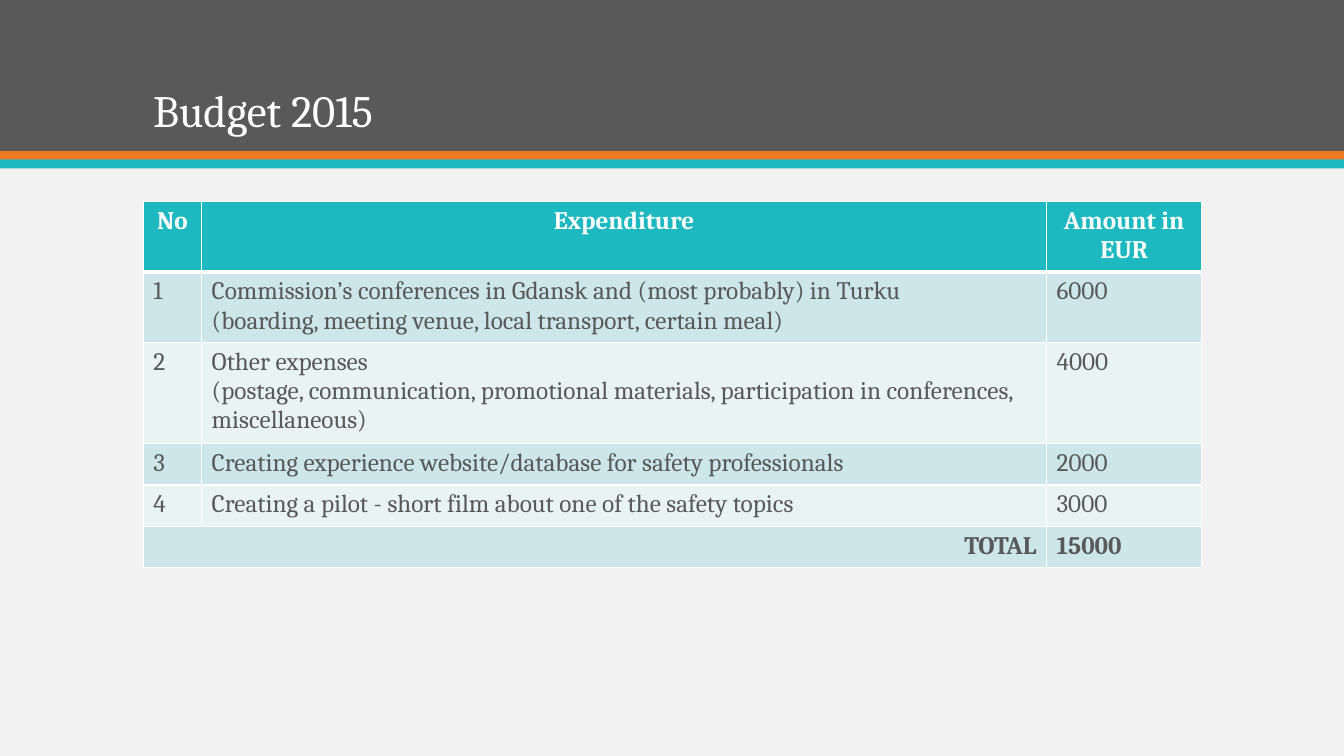
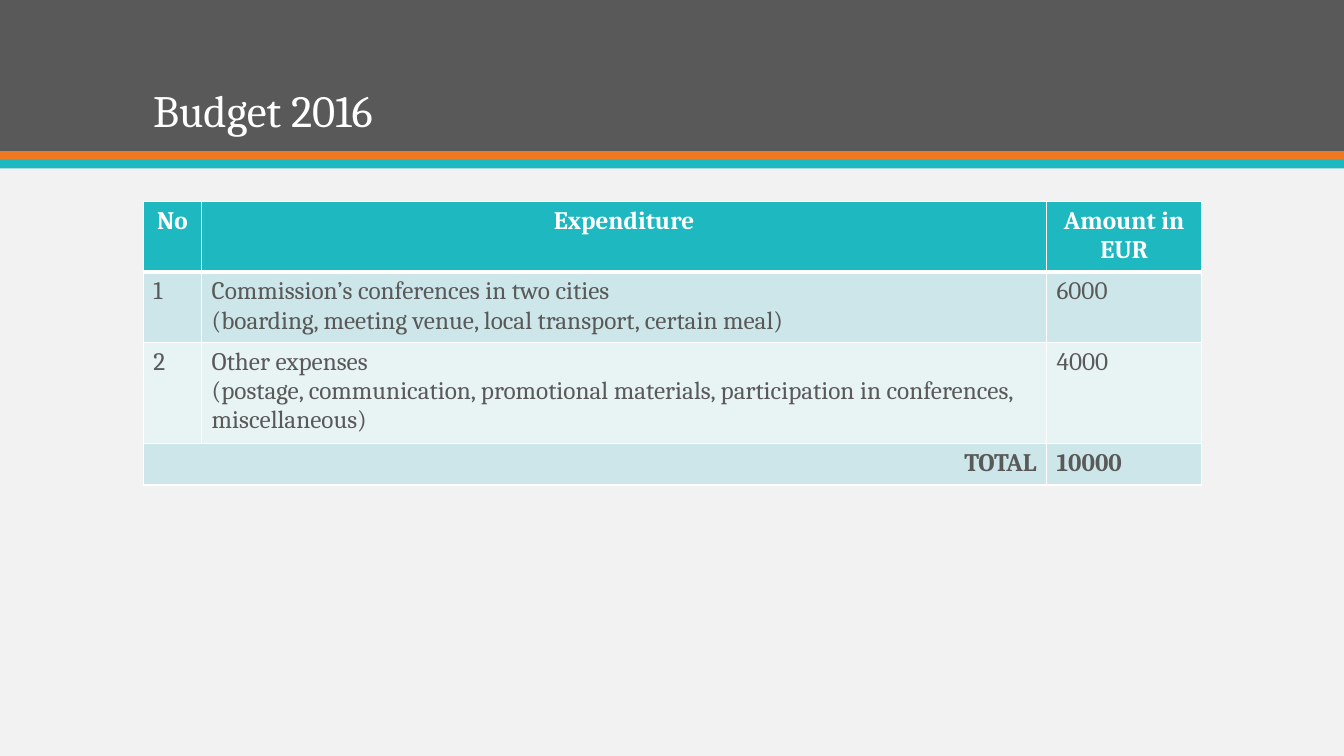
"""Build two yearly budget slides with a shared title band and table style."""
from lxml.etree import SubElement as Sub
from pptx import Presentation
from pptx.dml.color import RGBColor
from pptx.enum.shapes import MSO_SHAPE as Shape
from pptx.enum.text import MSO_ANCHOR as Anchor, PP_ALIGN as Align
from pptx.oxml.ns import qn
from pptx.util import Inches, Pt

WHITE = RGBColor(0xFF, 0xFF, 0xFF)
PALE = RGBColor(0xF2, 0xF2, 0xF2)
GRAY = RGBColor(0x59, 0x59, 0x59)
ORANGE = RGBColor(0xEF, 0x79, 0x20)
TEAL = RGBColor(0x1E, 0xB8, 0xC1)
STRIPES = (RGBColor(0xCD, 0xE6, 0xE9), RGBColor(0xE8, 0xF3, 0xF4))

FONT = "Cambria"
WIDTH = 13.33
LEFT = 1.42
COLS = (0.58, 8.38, 1.54)
ROW = 0.41
BANDS = ((0, 1.5, GRAY), (1.5, 0.09, ORANGE), (1.58, 0.09, TEAL))
HEADS = ("No", "Expenditure", "Amount in EUR")

MEALS = "(boarding, meeting venue, local transport, certain meal)"
OTHER = ("Other expenses\v(postage, communication, promotional materials, "
         "participation in conferences, miscellaneous)")
BUDGETS = {
    2015: (
        ("Commission’s conferences in Gdansk and (most probably) in Turku\v" + MEALS, 6000),
        (OTHER, 4000),
        ("Creating experience website/database for safety professionals", 2000),
        ("Creating a pilot - short film about one of the safety topics", 3000),
    ),
    2016: (
        ("Commission’s conferences in two cities\v" + MEALS, 6000),
        (OTHER, 4000),
    ),
}


def write(frame, text, size, color, bold=False, align=Align.LEFT):
    para = frame.paragraphs[0]
    para.text = text
    para.alignment = align
    font = para.font
    font.name, font.size, font.bold = FONT, Pt(size), bold
    font.color.rgb = color
    return para


def add_band(slide, top, height, color):
    band = slide.shapes.add_shape(
        Shape.RECTANGLE, 0, Inches(top), Inches(WIDTH), Inches(height))
    band.shadow.inherit = False
    band.fill.solid()
    band.fill.fore_color.rgb = color
    band.line.fill.background()


def add_title(slide, text):
    box = slide.shapes.add_textbox(
        Inches(LEFT), Inches(0.28), Inches(sum(COLS)), Inches(1.13))
    frame = box.text_frame
    frame.word_wrap = True
    frame.vertical_anchor = Anchor.BOTTOM
    write(frame, text, 32, WHITE).line_spacing = 0.9


def add_edges(cell, head, below):
    props = cell._tc.get_or_add_tcPr()
    widths = {"L": 1, "R": 1, "T": 3 if below else 1, "B": 3 if head else 1}
    for side, width in widths.items():
        line = Sub(props, qn(f"a:ln{side}"), w=str(Pt(width)))
        fill = Sub(line, qn("a:solidFill"))
        Sub(fill, qn("a:srgbClr"), val=str(WHITE))


def add_table(slide, items):
    total = sum(cost for _, cost in items)
    rows = [HEADS]
    rows += [(num, *item) for num, item in enumerate(items, 1)]
    rows.append(("TOTAL", "", total))
    last = len(rows) - 1
    table = slide.shapes.add_table(
        len(rows), len(COLS), Inches(LEFT), Inches(2),
        Inches(sum(COLS)), Inches(ROW * len(rows))).table
    for col, width in zip(table.columns, COLS):
        col.width = Inches(width)
    table.cell(last, 0).merge(table.cell(last, 1))
    for r, row in enumerate(rows):
        head = r == 0
        for c, value in enumerate(row):
            cell = table.cell(r, c)
            add_edges(cell, head, r == 1)
            cell.fill.solid()
            cell.fill.fore_color.rgb = TEAL if head else STRIPES[(r - 1) % 2]
            if cell.is_spanned:
                continue
            align = Align.CENTER if head else Align.LEFT
            if cell.is_merge_origin:
                align = Align.RIGHT
            write(cell.text_frame, str(value), 18, WHITE if head else GRAY,
                  r in (0, last), align)


def add_budget(deck, year, items):
    slide = deck.slides.add_slide(deck.slide_layouts[6])
    back = slide.background.fill
    back.solid()
    back.fore_color.rgb = PALE
    for band in BANDS:
        add_band(slide, *band)
    add_title(slide, f"Budget {year}")
    add_table(slide, items)


def main():
    deck = Presentation()
    deck.slide_width, deck.slide_height = Inches(WIDTH), Inches(7.5)
    for year, items in BUDGETS.items():
        add_budget(deck, year, items)
    deck.save("out.pptx")


if __name__ == "__main__":
    main()
